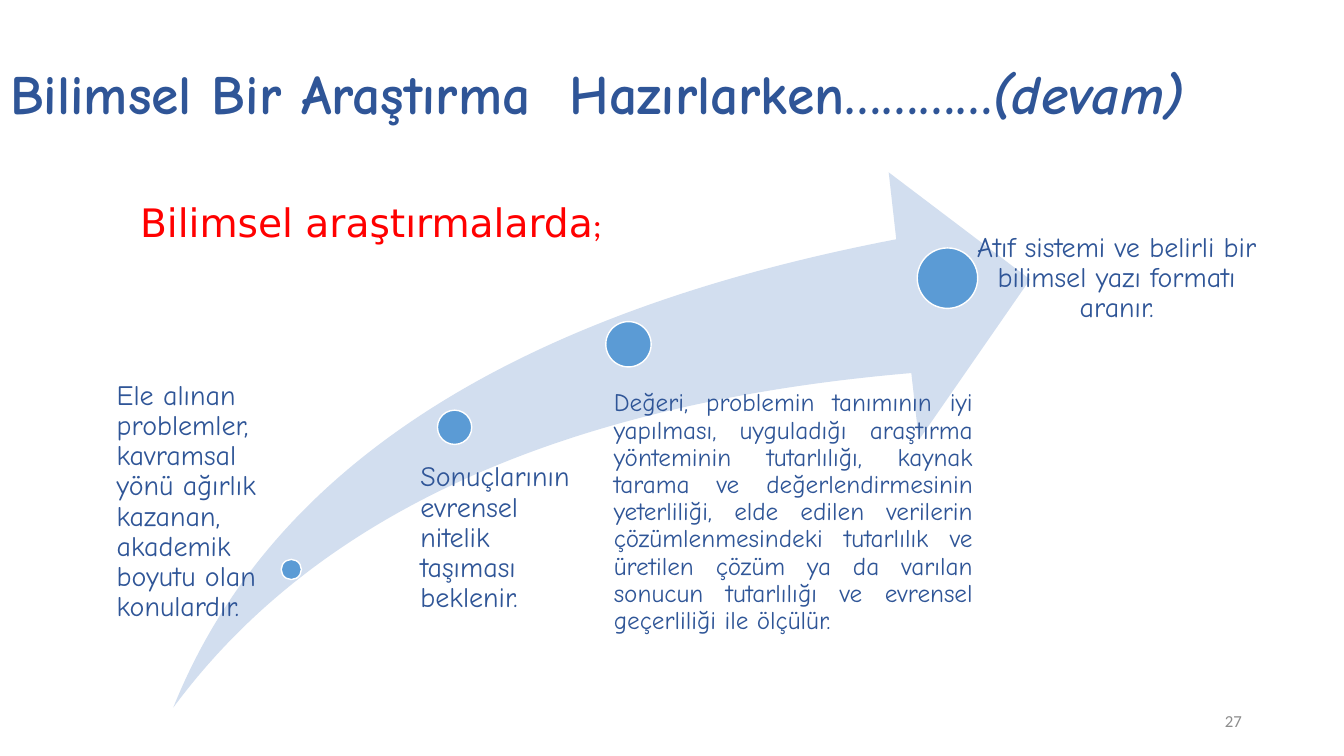
from pptx import Presentation
from pptx.dml.color import RGBColor
from pptx.enum.shapes import MSO_SHAPE
from pptx.enum.text import MSO_ANCHOR, MSO_AUTO_SIZE, PP_ALIGN
from pptx.oxml.ns import qn
from pptx.util import Pt

COLORS = {
    "heading": "2F5597",
    "accent": "FF0000",
    "arrow": "D2DEEF",
    "dot": "5B9BD5",
    "outline": "FFFFFF",
    "number": "8C8C8C",
}


def place(shape, left, top, width, height):
    shape.left, shape.top = Pt(left), Pt(top)
    shape.width, shape.height = Pt(width), Pt(height)


def style(font, face, size, color):
    font.name, font.size = face, Pt(size)
    font.color.rgb = RGBColor.from_string(COLORS[color])


deck = Presentation()
deck.slide_width, deck.slide_height = Pt(960), Pt(540)
slide = deck.slides.add_slide(deck.slide_layouts[1])

heading = slide.shapes.title
place(heading, 0, 16.5, 960, 104.4)
heading.text_frame.auto_size = MSO_AUTO_SIZE.NONE
heading.text_frame.vertical_anchor = MSO_ANCHOR.MIDDLE
heading_line = heading.text_frame.paragraphs[0]
heading_line.alignment = PP_ALIGN.LEFT
heading_line.line_spacing = 0.9
style(heading_line.font, "Comic Neue", 39.6, "heading")
heading_line.font.bold = True
heading_line.add_run().text = "Bilimsel Bir Araştırma  Hazırlarken…………"
continued = heading_line.add_run()
continued.text = "(devam)"
continued.font.italic = True

intro = slide.placeholders[1]
place(intro, 92.9, 141.8, 774.7, 342.7)
intro.text_frame.auto_size = MSO_AUTO_SIZE.NONE
intro_line = intro.text_frame.paragraphs[0]
intro_line.line_spacing = 0.9
intro_line.space_before = Pt(10)
intro_format = intro_line._p.get_or_add_pPr()
intro_format.set("marL", "0")
intro_format.set("indent", "0")
intro_format.append(intro_format.makeelement(qn("a:buNone"), {}))
for words, face, size in [
    ("Bilimsel araştırmalarda", "DejaVu Sans", 28),
    (";", "Calibri", 24),
]:
    run = intro_line.add_run()
    run.text = words
    style(run.font, face, size, "accent")

arrow = slide.shapes.add_shape(
    MSO_SHAPE.SWOOSH_ARROW, Pt(123.8), Pt(123.1), Pt(612), Pt(382.3)
)
arrow.adjustments[0] = 0.25
arrow.adjustments[1] = 0.25
arrow.shadow.inherit = False
arrow.fill.solid()
arrow.fill.fore_color.rgb = RGBColor.from_string(COLORS["arrow"])
arrow.line.fill.background()

criteria = [
    ((200.9, 399.6, 14.4), (76.3, 272.2, 118.1, 122.4), 7.2, 20, PP_ALIGN.LEFT,
     "Ele alınan problemler, kavramsal yönü ağırlık kazanan, akademik boyutu "
     "olan konulardır."),
    ((312.5, 293, 24.5), (287.3, 330.5, 128.2, 175), 13, 20, PP_ALIGN.LEFT,
     "Sonuçlarının evrensel nitelik taşıması beklenir."),
    ((432.7, 229.7, 32.4), (421.2, 278.6, 273.6, 226.8), 17.3, 18, PP_ALIGN.JUSTIFY,
     "Değeri, problemin tanımının iyi yapılması, uyguladığı araştırma yönteminin "
     "tutarlılığı, kaynak tarama ve değerlendirmesinin yeterliliği, elde edilen "
     "verilerin çözümlenmesindeki tutarlılık ve üretilen çözüm ya da varılan "
     "sonucun tutarlılığı ve evrensel geçerliliği ile ölçülür."),
    ((655.2, 177.1, 43.2), (674.6, 166.3, 223.2, 85.7), 23, 20, PP_ALIGN.CENTER,
     "Atıf sistemi ve belirli bir bilimsel yazı formatı aranır."),
]
for (left, top, diameter), area, indent, size, alignment, words in criteria:
    dot = slide.shapes.add_shape(
        MSO_SHAPE.OVAL, Pt(left), Pt(top), Pt(diameter), Pt(diameter)
    )
    dot.shadow.inherit = False
    dot.fill.solid()
    dot.fill.fore_color.rgb = RGBColor.from_string(COLORS["dot"])
    dot.line.color.rgb = RGBColor.from_string(COLORS["outline"])
    dot.line.width = Pt(1)

    criterion = slide.shapes.add_textbox(*map(Pt, area)).text_frame
    criterion.word_wrap = True
    criterion.margin_left = Pt(indent)
    criterion.margin_top = criterion.margin_right = criterion.margin_bottom = 0
    criterion_line = criterion.paragraphs[0]
    criterion_line.text = words
    criterion_line.alignment = alignment
    criterion_line.line_spacing = 0.9
    style(criterion_line.font, "Comic Neue", size, "heading")

page_number = slide.shapes.add_textbox(Pt(678.2), Pt(500.4), Pt(216), Pt(28.8)).text_frame
page_number.word_wrap = True
page_number.vertical_anchor = MSO_ANCHOR.MIDDLE
number_line = page_number.paragraphs[0]
number_line.text = "27"
number_line.alignment = PP_ALIGN.RIGHT
style(number_line.font, "Calibri", 12, "number")

deck.save("out.pptx")
